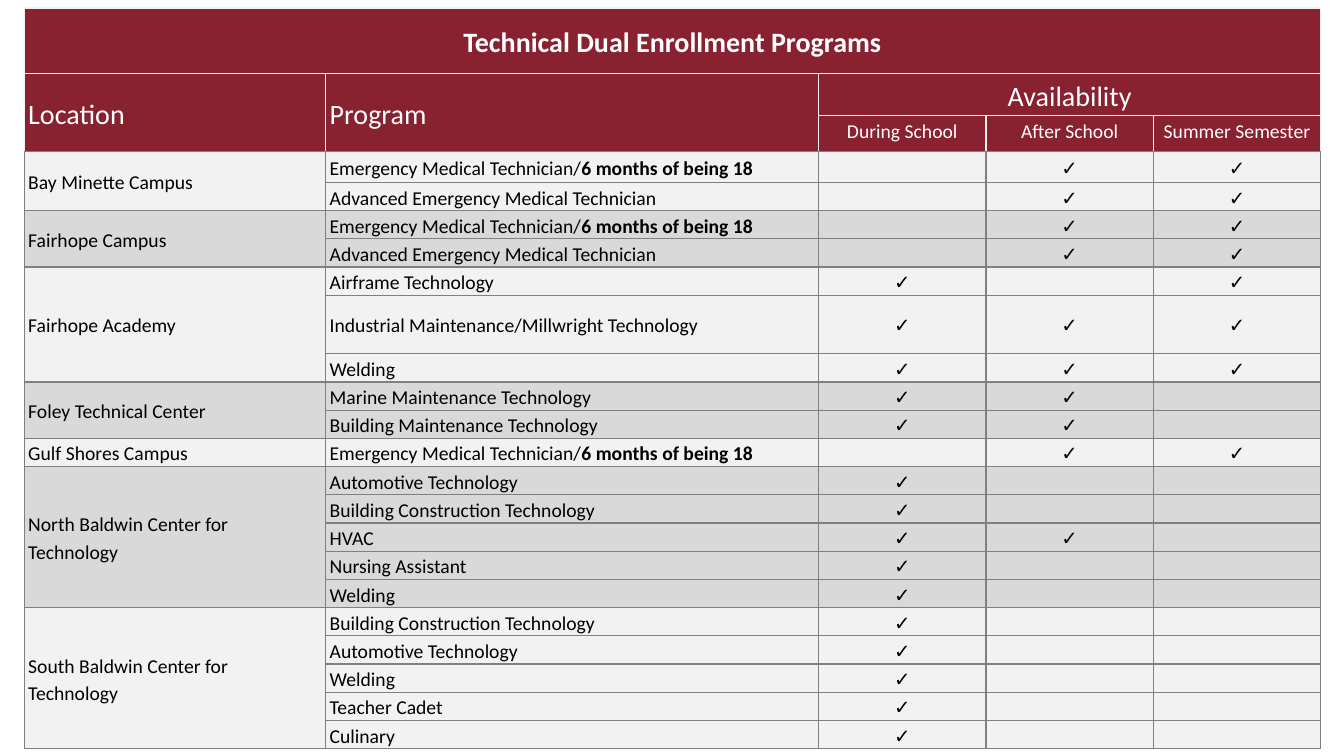
from lxml import etree
from pptx import Presentation
from pptx.dml.color import RGBColor
from pptx.enum.text import MSO_ANCHOR, PP_ALIGN
from pptx.oxml.ns import qn
from pptx.util import Pt

LEFT, CENTER = PP_ALIGN.LEFT, PP_ALIGN.CENTER
TOP, MIDDLE = MSO_ANCHOR.TOP, MSO_ANCHOR.MIDDLE

# Content: each campus with its programs (name, during school, after school, summer)
TITLE = "Technical Dual Enrollment Programs"
TERMS = ("During School", "After School", "Summer Semester")
EMT = "Emergency Medical Technician/"
AGE_LIMIT = "6 months of being 18"
CHECK = "✓"
CAMPUSES = [
    ("Bay Minette Campus", [
        (EMT, 0, 1, 1),
        ("Advanced Emergency Medical Technician", 0, 1, 1)]),
    ("Fairhope Campus", [
        (EMT, 0, 1, 1),
        ("Advanced Emergency Medical Technician", 0, 1, 1)]),
    ("Fairhope Academy", [
        ("Airframe Technology", 1, 0, 1),
        ("Industrial Maintenance/Millwright Technology", 1, 1, 1),
        ("Welding", 1, 1, 1)]),
    ("Foley Technical Center", [
        ("Marine Maintenance Technology", 1, 1, 0),
        ("Building Maintenance Technology", 1, 1, 0)]),
    ("Gulf Shores Campus", [
        (EMT, 0, 1, 1)]),
    ("North Baldwin Center for Technology", [
        ("Automotive Technology", 1, 0, 0),
        ("Building Construction Technology", 1, 0, 0),
        ("HVAC", 1, 1, 0),
        ("Nursing Assistant", 1, 0, 0),
        ("Welding", 1, 0, 0)]),
    ("South Baldwin Center for Technology", [
        ("Building Construction Technology", 1, 0, 0),
        ("Automotive Technology", 1, 0, 0),
        ("Welding", 1, 0, 0),
        ("Teacher Cadet", 1, 0, 0),
        ("Culinary", 1, 0, 0)]),
]

# Look
FONT = "Calibri"
MAROON = RGBColor(0x88, 0x21, 0x30)
WHITE = RGBColor(0xFF, 0xFF, 0xFF)
BLACK = RGBColor(0, 0, 0)
PALE = RGBColor(0xF2, 0xF2, 0xF2)
SILVER = RGBColor(0xD9, 0xD9, 0xD9)
GRAY = RGBColor(0x80, 0x80, 0x80)

# Lengths in px, 100 to the inch
PX = 9144
SLIDE_SIZE = (1333, 750)
TABLE_CORNER = (24, 8)
COLUMN_WIDTHS = (299, 489, 166, 166, 166)
HEADER_HEIGHTS = (65, 42, 35)
PROGRAM_HEIGHT = 28
TALL_ROWS = {3: 31, 8: 58}
SIDE_MARGIN = 4
HEADER_ROWS = len(HEADER_HEIGHTS)


def write(cell, text, size=14, color=BLACK, bold=False, align=LEFT,
          anchor=MIDDLE, bold_tail=""):
    cell.vertical_anchor = anchor
    paragraph = cell.text_frame.paragraphs[0]
    paragraph.alignment = align
    paragraph.line_spacing = 1.15
    for words, heavy in ((text, bold), (bold_tail, True)):
        if words:
            run = paragraph.add_run()
            run.text = words
            run.font.name = FONT
            run.font.size = Pt(size)
            run.font.bold = heavy
            run.font.color.rgb = color


def prepare(cell, fill, edge, bottom_edge):
    """Set margins, borders and fill, and keep an empty cell from growing its row."""
    cell.margin_left = cell.margin_right = SIDE_MARGIN * PX
    cell.margin_top = cell.margin_bottom = 0
    properties = cell._tc.get_or_add_tcPr()
    for side, color in (("L", edge), ("R", edge), ("T", edge), ("B", bottom_edge)):
        line = etree.SubElement(properties, qn("a:ln" + side), w=str(Pt(1)))
        solid = etree.SubElement(line, qn("a:solidFill"))
        etree.SubElement(solid, qn("a:srgbClr"), val=str(color))
    cell.fill.solid()
    cell.fill.fore_color.rgb = fill
    paragraph = cell.text_frame.paragraphs[0]
    etree.SubElement(paragraph._p, qn("a:endParaRPr"), sz="1400")


# Slide and table
deck = Presentation()
deck.slide_width, deck.slide_height = (side * PX for side in SLIDE_SIZE)
slide = deck.slides.add_slide(deck.slide_layouts[6])

program_count = sum(len(programs) for _, programs in CAMPUSES)
row_heights = list(HEADER_HEIGHTS) + [
    TALL_ROWS.get(HEADER_ROWS + i, PROGRAM_HEIGHT) for i in range(program_count)]
table = slide.shapes.add_table(
    len(row_heights), len(COLUMN_WIDTHS), *(corner * PX for corner in TABLE_CORNER),
    sum(COLUMN_WIDTHS) * PX, sum(row_heights) * PX).table
table.first_row = table.horz_banding = False
for column, width in zip(table.columns, COLUMN_WIDTHS):
    column.width = width * PX
for row, height in zip(table.rows, row_heights):
    row.height = height * PX

# Header
for r in range(HEADER_ROWS):
    for c in range(len(COLUMN_WIDTHS)):
        meets_body = r == 2 or (r == 1 and c < 2)
        prepare(table.cell(r, c), MAROON, PALE, GRAY if meets_body else PALE)
table.cell(0, 0).merge(table.cell(0, 4))
write(table.cell(0, 0), TITLE, size=20, color=WHITE, bold=True, align=CENTER)
for c, heading in enumerate(("Location", "Program")):
    table.cell(1, c).merge(table.cell(2, c))
    write(table.cell(1, c), heading, size=20, color=WHITE)
table.cell(1, 2).merge(table.cell(1, 4))
write(table.cell(1, 2), "Availability", size=20, color=WHITE, align=CENTER)
for c, term in enumerate(TERMS, start=2):
    write(table.cell(2, c), term, color=WHITE, align=CENTER, anchor=TOP)

# Campuses, in alternating shades
first = HEADER_ROWS
for index, (campus, programs) in enumerate(CAMPUSES):
    shade = SILVER if index % 2 else PALE
    for r, (program, *offered) in enumerate(programs, start=first):
        for c in range(len(COLUMN_WIDTHS)):
            prepare(table.cell(r, c), shade, GRAY, GRAY)
        write(table.cell(r, 1), program, bold_tail=AGE_LIMIT if program == EMT else "")
        for c, available in enumerate(offered, start=2):
            if available:
                write(table.cell(r, c), CHECK, align=CENTER)
    last = first + len(programs) - 1
    if last > first:
        table.cell(first, 0).merge(table.cell(last, 0))
    write(table.cell(first, 0), campus)
    first = last + 1

deck.save("out.pptx")
